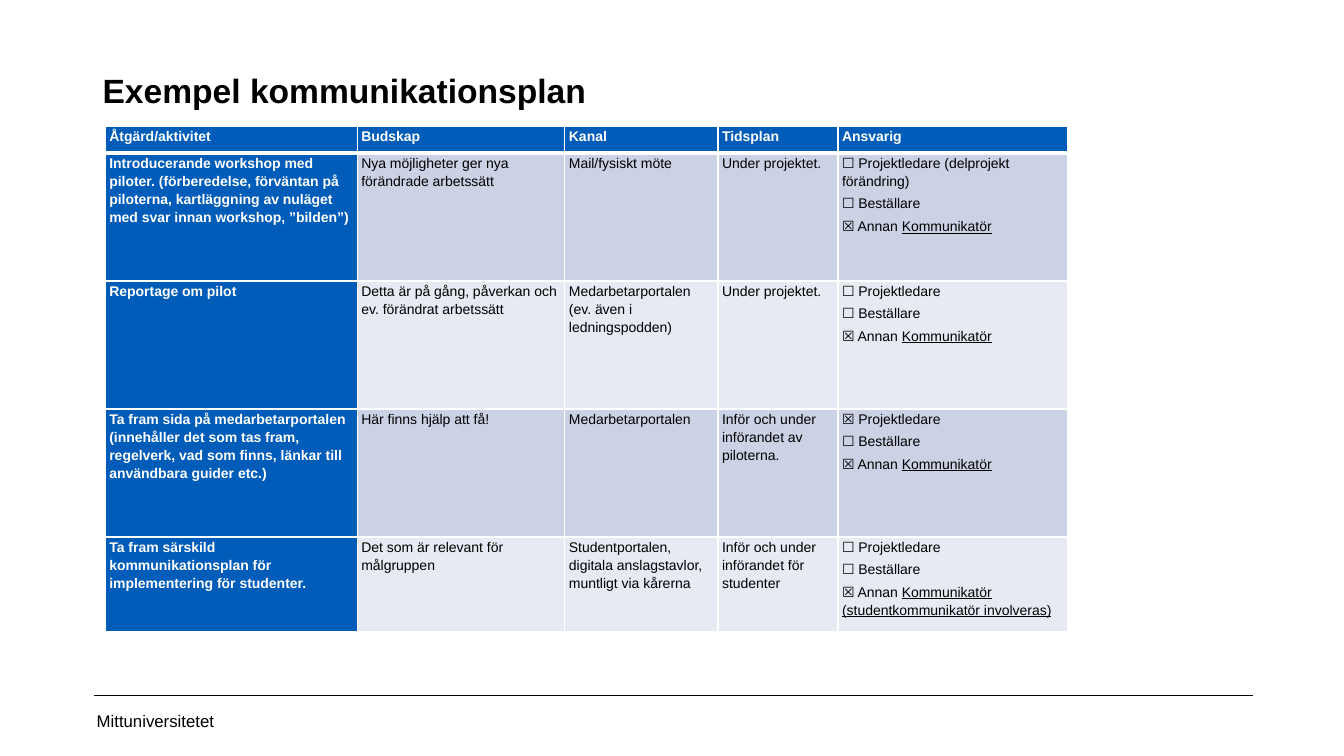
from dataclasses import dataclass

from lxml.etree import SubElement
from pptx import Presentation
from pptx.dml.color import RGBColor
from pptx.enum.shapes import MSO_CONNECTOR
from pptx.enum.text import MSO_ANCHOR
from pptx.oxml import parse_xml
from pptx.oxml.ns import nsdecls, qn
from pptx.util import Pt


@dataclass(frozen=True)
class Theme:
    font: str = "Arial"
    black: str = "000000"
    white: str = "FFFFFF"
    blue: str = "005CB9"
    bands: tuple = ("CCD2E6", "E7EAF3")
    title: int = 24
    footer: int = 12
    body: int = 10


theme = Theme()


def add_text(p, text, size=theme.body, color=theme.black, bold=False, underline=False):
    r = p.add_run()
    r.text = text
    r.font.name = theme.font
    r.font.size = Pt(size)
    r.font.bold = bold
    r.font.underline = underline
    r.font.color.rgb = RGBColor.from_string(color)


def set_borders(cell, top, bottom):
    tc_pr = cell._tc.get_or_add_tcPr()
    widths = {"lnL": 1, "lnR": 1, "lnT": top, "lnB": bottom}
    for i, (side, width) in enumerate(widths.items()):
        tc_pr.insert(i, parse_xml(
            f'<a:{side} {nsdecls("a")} w="{Pt(width)}"><a:solidFill>'
            f'<a:srgbClr val="{theme.white}"/></a:solidFill></a:{side}>'))


prs = Presentation()
prs.slide_width, prs.slide_height = Pt(960), Pt(540)
s = prs.slides.add_slide(prs.slide_layouts[6])

title = s.shapes.add_textbox(Pt(66.2), Pt(38.9), Pt(830.9), Pt(51.1))
tf = title.text_frame
tf.word_wrap = True
p = tf.paragraphs[0]
p.line_spacing = Pt(36)
add_text(p, "Exempel kommunikationsplan", size=theme.title, bold=True)

headers = ["Åtgärd/aktivitet", "Budskap", "Kanal", "Tidsplan", "Ansvarig"]
activities = [
    ["Introducerande workshop med piloter. (förberedelse, förväntan på piloterna, "
     "kartläggning av nuläget med svar innan workshop, ”bilden”)",
     "Nya möjligheter ger nya förändrade arbetssätt",
     "Mail/fysiskt möte",
     "Under projektet."],
    ["Reportage om pilot",
     "Detta är på gång, påverkan och ev. förändrat arbetssätt",
     "Medarbetarportalen (ev. även i ledningspodden)",
     "Under projektet."],
    ["Ta fram sida på medarbetarportalen (innehåller det som tas fram, regelverk, "
     "vad som finns, länkar till användbara guider etc.)",
     "Här finns hjälp att få!",
     "Medarbetarportalen",
     "Inför och under införandet av piloterna."],
    ["Ta fram särskild kommunikationsplan för implementering för studenter.",
     "Det som är relevant för målgruppen",
     "Studentportalen, digitala anslagstavlor, muntligt via kårerna",
     "Inför och under införandet för studenter"],
]
responsible = [
    ("☐ Projektledare (delprojekt förändring)", "Kommunikatör"),
    ("☐ Projektledare", "Kommunikatör"),
    ("☒ Projektledare", "Kommunikatör"),
    ("☐ Projektledare", "Kommunikatör (studentkommunikatör involveras)"),
]
rows = [headers] + [
    cells + [f"{leader}\n☐ Beställare\n☒ Annan "]
    for cells, (leader, other) in zip(activities, responsible)
]
col_widths = [180, 148.3, 109.4, 85.7, 164.2]
row_heights = [19.4, 91.4, 91.4, 91.4, 67.7]

frame = s.shapes.add_table(len(rows), len(headers), Pt(75.2), Pt(90),
                           Pt(sum(col_widths)), Pt(sum(row_heights)))
table = frame.table
for col, width in zip(table.columns, col_widths):
    col.width = Pt(width)
for row, height in zip(table.rows, row_heights):
    row.height = Pt(height)

for i, texts in enumerate(rows):
    for j, text in enumerate(texts):
        cell = table.cell(i, j)
        heading = i == 0 or j == 0
        cell.margin_left = cell.margin_right = Pt(2.9)
        cell.margin_top = cell.margin_bottom = Pt(0)
        cell.fill.solid()
        fill = theme.blue if heading else theme.bands[(i - 1) % 2]
        cell.fill.fore_color.rgb = RGBColor.from_string(fill)
        set_borders(cell, top=3 if i == 1 else 1, bottom=3 if i == 0 else 1)
        tf = cell.text_frame
        for k, line in enumerate(text.split("\n")):
            p = tf.add_paragraph() if k else tf.paragraphs[0]
            p.line_spacing = Pt(13)
            if k:
                p.space_before = Pt(3)
            add_text(p, line, bold=heading,
                     color=theme.white if heading else theme.black)
        if i and j == len(headers) - 1:
            add_text(p, responsible[i - 1][1], underline=True)

rule = s.shapes.add_connector(MSO_CONNECTOR.STRAIGHT, Pt(67), Pt(496.8), Pt(895), Pt(496.8))
rule.line.width = Pt(0.25)
rule.line.color.rgb = RGBColor.from_string(theme.black)
SubElement(rule._element.spPr, qn("a:effectLst"))

footer = s.shapes.add_textbox(Pt(66.2), Pt(500.4), Pt(216), Pt(28.8))
tf = footer.text_frame
tf.word_wrap = True
tf.margin_left = Pt(2.9)
tf.vertical_anchor = MSO_ANCHOR.MIDDLE
add_text(tf.paragraphs[0], "Mittuniversitetet", size=theme.footer)

prs.save("out.pptx")
